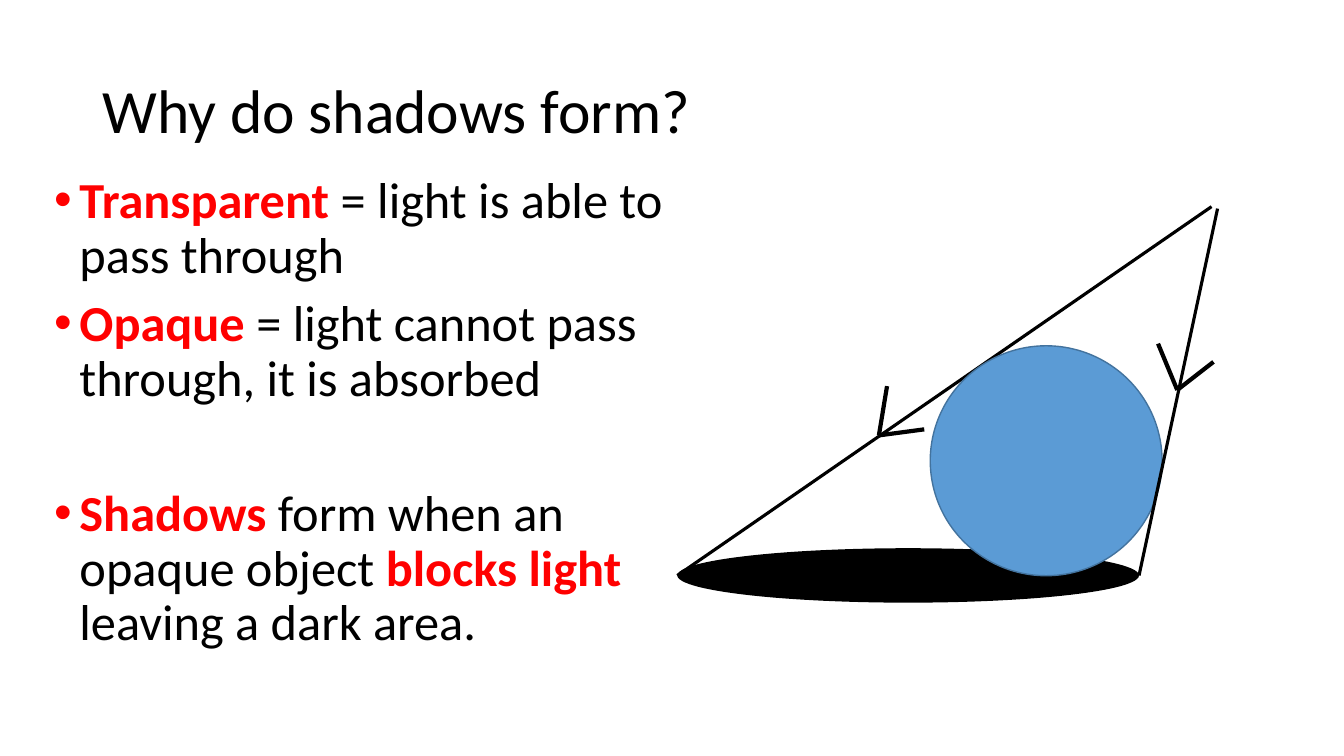
import pptx
import pptx.dml.color
import pptx.enum.shapes
import pptx.enum.text
import pptx.oxml
import pptx.oxml.ns
import pptx.util

Pt = pptx.util.Pt
COLORS = {"text": "000000", "key": "FF0000", "shadow": "000000",
          "ball": "5B9BD5", "ball_edge": "43739E", "ray": "000000"}
POINTS = [
    (10, [("Transparent", "key"), (" = light is able to pass through", "text")]),
    (10, [("Opaque", "key"), (" = light cannot pass through, it is absorbed", "text")]),
    (58, [("Shadows ", "key"), ("form when an opaque object ", "text"),
          ("blocks light ", "key"), ("leaving a dark area.", "text")]),
]


def rgb(name):
    """Return the named colour."""
    return pptx.dml.color.RGBColor.from_string(COLORS[name])


def apply(obj, values):
    """Set attributes from a dict of format values."""
    for name, value in values.items():
        setattr(obj, name, value)


def add_text_frame(s, box, anchor):
    """Add a wrapping text box and return its frame."""
    tf = s.shapes.add_textbox(*map(Pt, box)).text_frame
    apply(tf, {"word_wrap": True, "vertical_anchor": anchor})
    return tf


def add_run(p, text, size, color):
    """Add a run, bold when it is a key term."""
    r = p.add_run()
    r.text = text
    apply(r.font, {"name": "Calibri", "size": Pt(size), "bold": color == "key"})
    r.font.color.rgb = rgb(color)


def add_bullet(p):
    """Give the paragraph a hanging bullet."""
    pPr = p._p.get_or_add_pPr()
    apply_indent = {"marL": Pt(18), "indent": -Pt(18)}
    for name, value in apply_indent.items():
        pPr.set(name, str(value))
    ns = pptx.oxml.ns.nsdecls("a")
    pPr.append(pptx.oxml.parse_xml(f'<a:buFont {ns} typeface="Arial"/>'))
    pPr.append(pptx.oxml.parse_xml(f'<a:buChar {ns} char="•"/>'))


def add_title(s, box):
    """Write the slide title in its box."""
    tf = add_text_frame(s, box, pptx.enum.text.MSO_ANCHOR.MIDDLE)
    p = tf.paragraphs[0]
    p.line_spacing = 0.9
    add_run(p, "Why do shadows form?", 44, "text")


def add_definitions(s, box):
    """Write the bulleted definitions in their box."""
    tf = add_text_frame(s, box, pptx.enum.text.MSO_ANCHOR.TOP)
    for i, (gap, runs) in enumerate(POINTS):
        p = tf.add_paragraph() if i else tf.paragraphs[0]
        apply(p, {"line_spacing": 0.9, "space_before": Pt(gap)})
        add_bullet(p)
        for text, color in runs:
            add_run(p, text, 36, color)


def add_line(shapes, origin, start, end, width):
    """Draw a straight line between two points relative to the origin."""
    ends = [Pt(o + d) for point in (start, end) for o, d in zip(origin, point)]
    sp = shapes.add_connector(pptx.enum.shapes.MSO_CONNECTOR.STRAIGHT, *ends)
    sp.line.color.rgb = rgb("ray")
    sp.line.width = Pt(width)
    sp._element.spPr.append(
        pptx.oxml.parse_xml(f'<a:effectLst {pptx.oxml.ns.nsdecls("a")}/>'))


def add_ellipse(s, origin, box, fill, edge=None):
    """Draw a filled ellipse relative to the origin."""
    x, y, w, h = box
    sp = s.shapes.add_shape(pptx.enum.shapes.MSO_SHAPE.OVAL, Pt(origin[0] + x),
                            Pt(origin[1] + y), Pt(w), Pt(h))
    sp.shadow.inherit = False
    sp.fill.solid()
    sp.fill.fore_color.rgb = rgb(fill)
    if edge:
        sp.line.color.rgb = rgb(edge)
        sp.line.width = Pt(1)
    else:
        sp.line.fill.background()


def add_ray_arrow(s, origin, tip, barbs):
    """Draw an open arrowhead as a group of two barbs."""
    group = s.shapes.add_group_shape()
    for barb in barbs:
        add_line(group.shapes, origin, barb, tip, 3)


def add_diagram(s, origin):
    """Draw the ball, its shadow and the two light rays."""
    add_line(s.shapes, origin, (381.6, 0), (0, 263.5), 2.25)
    add_ellipse(s, origin, (0, 244, 329.8, 38.9), "shadow")
    add_ellipse(s, origin, (180.7, 99.4, 165.6, 164.2), "ball", "ball_edge")
    add_ray_arrow(s, origin, (144, 163.4), [(149.8, 128.2), (176.4, 159.1)])
    add_line(s.shapes, origin, (385.9, 1.4), (329.8, 263.5), 2.25)
    add_ray_arrow(s, origin, (357.1, 131), [(343.4, 97.9), (383, 110.9)])


def main():
    """Build and save the slide."""
    prs = pptx.Presentation()
    apply(prs, {"slide_width": Pt(960), "slide_height": Pt(540)})
    s = prs.slides.add_slide(prs.slide_layouts[6])
    add_title(s, (66, 29, 828, 104.4))
    add_definitions(s, (31.7, 121.7, 489.6, 342.7))
    add_diagram(s, (483.8, 147.6))
    prs.save("out.pptx")


if __name__ == "__main__":
    main()
